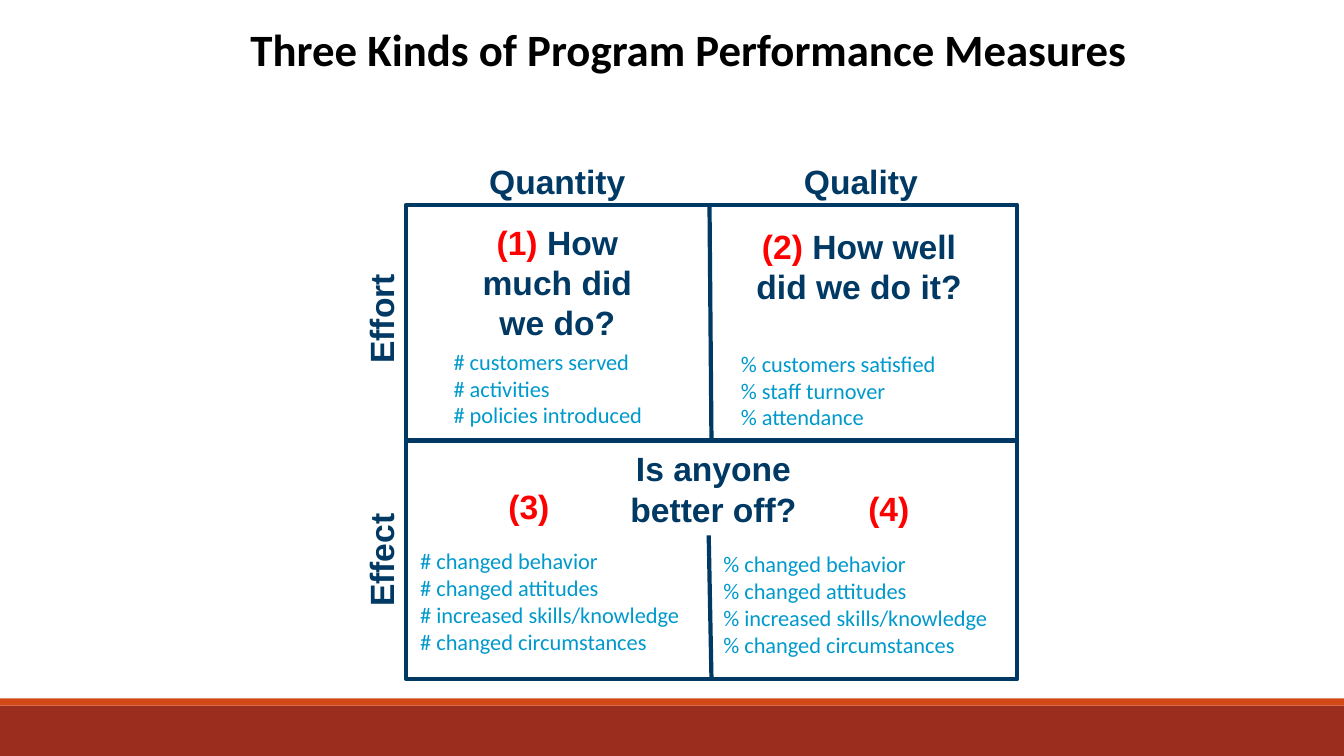
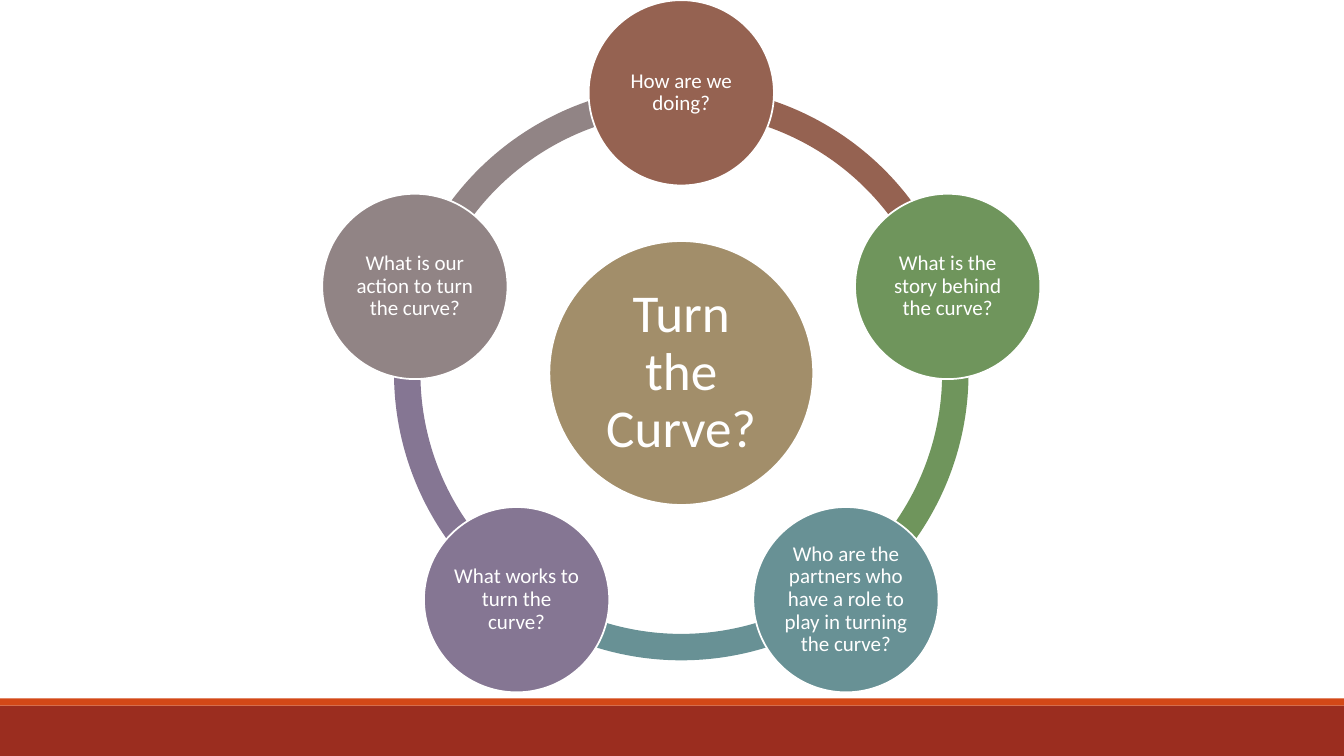
from lxml.etree import SubElement
from pptx import Presentation
from pptx.dml.color import RGBColor
from pptx.enum.shapes import MSO_CONNECTOR as Link, MSO_SHAPE as Shape
from pptx.enum.text import MSO_ANCHOR as Anchor, PP_ALIGN as Align
from pptx.oxml.ns import qn
from pptx.util import Cm, Pt
from math import cos, radians, sin

# Shared style (lengths in cm)
WIDTH, HEIGHT = 33.87, 19.05
NAVY, RED, SKY = "003964", "FF0000", "0099CC"
BLACK, WHITE = "000000", "FFFFFF"
BANDS = [((0, 17.78, WIDTH, 1.27), "9B2D1F"),
         ((0, 17.6, WIDTH, 0.18), "D34817")]

# Slide 1: measures
TITLE = "Three Kinds of Program Performance Measures"
FRAME = (10.24, 5.16, 15.39, 11.96)
RULES = [(10.24, 11.1, 25.6, 11.1),
         (17.88, 5.16, 17.93, 11.12),
         (17.86, 13.49, 17.93, 17.12)]
HEADS = [  # box, red mark, navy text, turn
    ((11.25, 3.94, 5.59, 1.27), "", "Quantity", 0),
    ((18.9, 3.94, 5.59, 1.27), "", "Quality", 0),
    ((6.8, 7.4, 5.59, 1.27), "", "Effort", 270),
    ((6.8, 13.48, 5.59, 1.27), "", "Effect", 270),
    ((11.48, 5.46, 5.13, 3.33), "(1) ", "How much did we do?", 0),
    ((18.49, 5.57, 6.32, 2.31), "(2) ", "How well\ndid we do it?", 0),
    ((14.27, 11.17, 7.42, 2.31), "", "Is anyone\nbetter off?", 0),
    ((11.58, 12.12, 3.5, 1.27), "(3)", "", 0),
    ((20.65, 12.17, 3.5, 1.27), "(4)", "", 0),
]
EFFORT = {
    "#": ["customers served", "activities", "policies introduced"],
    "%": ["customers satisfied", "staff turnover", "attendance"],
}
EFFECT = ["changed behavior", "changed attitudes",
          "increased skills/knowledge", "changed circumstances"]
LISTS = [  # box, sign, items
    ((11.18, 8.64, 5.79, 2.31), "#", EFFORT["#"]),
    ((18.42, 8.69, 6.73, 2.31), "%", EFFORT["%"]),
    ((10.34, 13.67, 7.95, 3.68), "#", EFFECT),
    ((17.98, 13.74, 8.84, 3.68), "%", EFFECT),
]

# Slide 2: cycle
HUB = ("Turn the Curve?", "A28E6A")
NODES = [
    ("How are we doing?", "956251"),
    ("What is the story behind the curve?", "6F955C"),
    ("Who are the partners who have a role to play in turning the curve?",
     "689195"),
    ("What works to turn the curve?", "857693"),
    ("What is our action to turn the curve?", "918485"),
]
MID_X, MID_Y, ORBIT = 17.17, 9.4, 7.06
RING_D, HUB_D, NODE_D = 14.48, 6.65, 4.67
RING_W = 0.046


def color(code):
    return RGBColor.from_string(code)


def place(box):
    return [Cm(size) for size in box]


def square(x, y, size):
    return x - size / 2, y - size / 2, size, size


def add_form(slide, kind, box, fill=None, line=None, width=1.25):
    form = slide.shapes.add_shape(kind, *place(box))
    form.shadow.inherit = False
    if fill:
        form.fill.solid()
        form.fill.fore_color.rgb = color(fill)
    else:
        form.fill.background()
    if line:
        form.line.color.rgb = color(line)
        form.line.width = Pt(width)
    else:
        form.line.fill.background()
    return form


def add_rule(slide, ends):
    rule = slide.shapes.add_connector(Link.STRAIGHT, *place(ends))
    rule.line.color.rgb = color(NAVY)
    rule.line.width = Pt(3)
    SubElement(rule.element.spPr, qn("a:effectLst"))


def style(para, size, name="Calibri", bold=False, align=Align.CENTER):
    para.alignment = align
    para.font.size = Pt(size)
    para.font.name = name
    para.font.bold = bold


def add_run(para, text, code):
    for i, part in enumerate(text.split("\n")):
        if i:
            para.add_line_break()
        run = para.add_run()
        run.text = part
        run.font.color.rgb = color(code)


def add_text(slide, box):
    label = slide.shapes.add_textbox(*place(box))
    label.text_frame.word_wrap = True
    return label


def add_disc(slide, x, y, size, text, fill, points, inset):
    disc = add_form(slide, Shape.OVAL, square(x, y, size), fill, WHITE)
    frame = disc.text_frame
    frame.word_wrap = True
    frame.vertical_anchor = Anchor.MIDDLE
    frame.margin_left = frame.margin_right = Cm(inset)
    frame.margin_top = frame.margin_bottom = Cm(inset)
    para = frame.paragraphs[0]
    style(para, points)
    para.line_spacing = 0.9
    add_run(para, text, WHITE)


def new_slide(deck):
    slide = deck.slides.add_slide(deck.slide_layouts[6])
    for box, fill in BANDS:
        add_form(slide, Shape.RECTANGLE, box, fill)
    return slide


def build_grid(deck):
    slide = new_slide(deck)
    # Frame and rules
    add_form(slide, Shape.RECTANGLE, FRAME, line=NAVY, width=3)
    for ends in RULES:
        add_rule(slide, ends)
    # Headings
    for box, mark, text, turn in HEADS:
        label = add_text(slide, box)
        label.rotation = turn
        para = label.text_frame.paragraphs[0]
        style(para, 24, "Arial", True)
        for part, code in ((mark, RED), (text, NAVY)):
            if part:
                add_run(para, part, code)
    # Lists of measures
    for box, sign, items in LISTS:
        frame = add_text(slide, box).text_frame
        for i, item in enumerate(items):
            para = frame.add_paragraph() if i else frame.paragraphs[0]
            style(para, 16, align=Align.LEFT)
            add_run(para, f"{sign} {item}", SKY)
    # Title
    para = add_text(slide, (4.75, 0.43, 25.22, 1.63)).text_frame.paragraphs[0]
    style(para, 32, bold=True)
    add_run(para, TITLE, BLACK)


def build_cycle(deck):
    slide = new_slide(deck)
    step = 360 / len(NODES)
    turns = [(270 + i * step) % 360 for i in range(len(NODES))]
    # Ring, one arc from each node to the next
    for (_, fill), turn in zip(NODES, turns):
        arc = add_form(slide, Shape.BLOCK_ARC,
                       square(MID_X, MID_Y, RING_D), fill)
        # One degree is 0.6 in adjustment units
        arc.adjustments[0] = turn * 0.6
        arc.adjustments[1] = (turn + step) % 360 * 0.6
        arc.adjustments[2] = RING_W
    # Hub and nodes
    add_disc(slide, MID_X, MID_Y, HUB_D, *HUB, 38, 0.13)
    for (text, fill), turn in zip(NODES, turns):
        x = MID_X + ORBIT * cos(radians(turn))
        y = MID_Y + ORBIT * sin(radians(turn))
        add_disc(slide, x, y, NODE_D, text, fill, 15, 0.05)


def main():
    deck = Presentation()
    deck.slide_width, deck.slide_height = Cm(WIDTH), Cm(HEIGHT)
    build_grid(deck)
    build_cycle(deck)
    deck.save("out.pptx")


if __name__ == "__main__":
    main()
